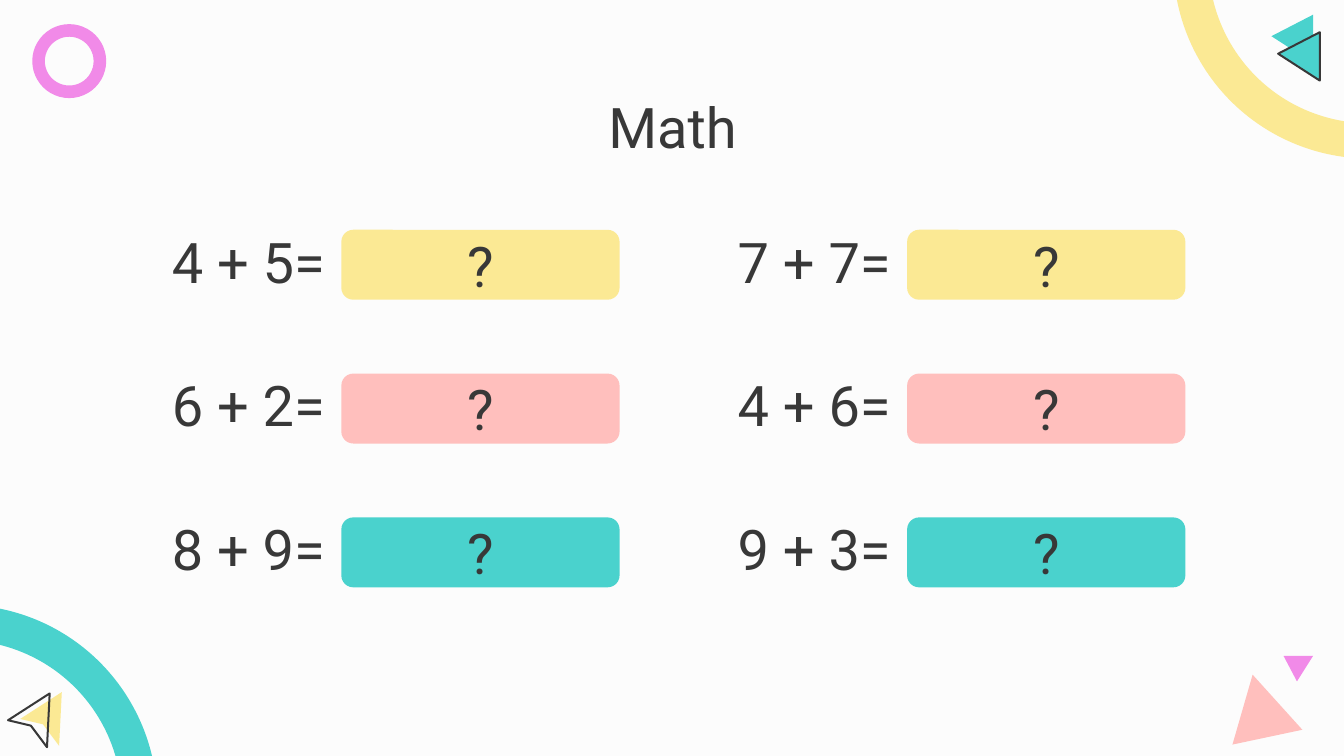
from pptx import Presentation
from pptx.dml.color import RGBColor
from pptx.enum import shapes, text
from pptx.util import Inches, Pt

COLORS = {
    "back": "FCFCFC",
    "ink": "383838",
    "yellow": "FBE994",
    "rose": "FFBFBD",
    "teal": "4AD2CD",
    "pink": "F18AE8",
}
FONT = {"name": "Roboto", "size": Pt(30)}
FRAME = {
    "word_wrap": True,
    "margin_left": Inches(0.1),
    "margin_right": Inches(0.1),
    "margin_top": Inches(0.1),
    "margin_bottom": Inches(0.1),
}
ROWS = [
    ("yellow", "4 + 5=", "7 + 7="),
    ("rose", "6 + 2=", "4 + 6="),
    ("teal", "8 + 9=", "9 + 3="),
]
LEFT, TOP = 1.18, 1.59
COL_STEP, ROW_STEP = 4.21, 1.07
WIDTH, HEIGHT = 2.07, 0.52
ARROW = [(0.46, 5.15), (0.15, 5.35), (0.32, 5.39), (0.44, 5.55)]
FLAG = [(9.77, 0.11), (9.46, 0.27), (9.77, 0.47)]
PEAK = [(9.32, 5.02), (9.17, 5.54), (9.69, 5.43)]
WEDGE = [(9.77, 4.88), (9.55, 4.88), (9.65, 5.07)]


def rgb(name):
    return RGBColor.from_string(COLORS[name])


def paint(shape, fill=None, line=None):
    shape.shadow.inherit = False
    if fill:
        shape.fill.solid()
        shape.fill.fore_color.rgb = rgb(fill)
    else:
        shape.fill.background()
    if line:
        shape.line.color.rgb = rgb(line)
        shape.line.width = Pt(1.07)
    else:
        shape.line.fill.background()


def write(shape, words, align, anchor):
    frame = shape.text_frame
    for key, value in FRAME.items():
        setattr(frame, key, value)
    frame.vertical_anchor = anchor
    para = frame.paragraphs[0]
    para.alignment = align
    run = para.add_run()
    run.text = words
    for key, value in FONT.items():
        setattr(run.font, key, value)
    run.font.color.rgb = rgb("ink")


def label(slide, words, x, y, width, align=text.PP_ALIGN.LEFT):
    box = slide.shapes.add_textbox(
        Inches(x), Inches(y), Inches(width), Inches(HEIGHT))
    write(box, words, align, text.MSO_ANCHOR.TOP)


def answer(slide, x, y, fill):
    box = slide.shapes.add_shape(
        shapes.MSO_SHAPE.ROUNDED_RECTANGLE,
        Inches(x), Inches(y), Inches(WIDTH), Inches(HEIGHT))
    box.adjustments[0] = 0.17
    paint(box, fill)
    write(box, "?", text.PP_ALIGN.CENTER, text.MSO_ANCHOR.MIDDLE)


def ring(slide, x, y, size, band, fill):
    """Draw a donut; band is its thickness as a share of its size."""
    shape = slide.shapes.add_shape(
        shapes.MSO_SHAPE.DONUT,
        Inches(x), Inches(y), Inches(size), Inches(size))
    shape.adjustments[0] = band
    paint(shape, fill)


def poly(slide, points, fill=None, line=None, shift=(0, 0)):
    """Draw a closed outline, moved by shift."""
    dx, dy = shift
    spots = [(Inches(x + dx), Inches(y + dy)) for x, y in points]
    pen = slide.shapes.build_freeform(*spots[0])
    pen.add_line_segments(spots[1:], close=True)
    paint(pen.convert_to_shape(), fill, line)


def decor(slide):
    ring(slide, 0.24, 0.18, 0.55, 0.17, "pink")
    ring(slide, -1.75, 4.5, 2.92, 0.09, "teal")
    poly(slide, PEAK, "rose")
    ring(slide, 8.73, -1.74, 2.92, 0.09, "yellow")
    poly(slide, WEDGE, "pink")
    poly(slide, ARROW, "yellow")
    poly(slide, ARROW, line="ink", shift=(-0.09, 0.01))
    poly(slide, FLAG, "teal")
    poly(slide, FLAG, "teal", "ink", shift=(0.05, 0.13))


def main():
    deck = Presentation()
    deck.slide_width = Inches(10)
    deck.slide_height = deck.slide_width * 9 // 16
    slide = deck.slides.add_slide(deck.slide_layouts[6])
    slide.background.fill.solid()
    slide.background.fill.fore_color.rgb = rgb("back")
    decor(slide)
    label(slide, "Math", 0.79, 0.59, 8.43, text.PP_ALIGN.CENTER)
    for row, (fill, *sums) in enumerate(ROWS):
        y = TOP + row * ROW_STEP
        for col, words in enumerate(sums):
            x = LEFT + col * COL_STEP
            label(slide, words, x, y, WIDTH)
            answer(slide, x + 1.36, y + 0.12, fill)
    deck.save("out.pptx")


if __name__ == "__main__":
    main()
